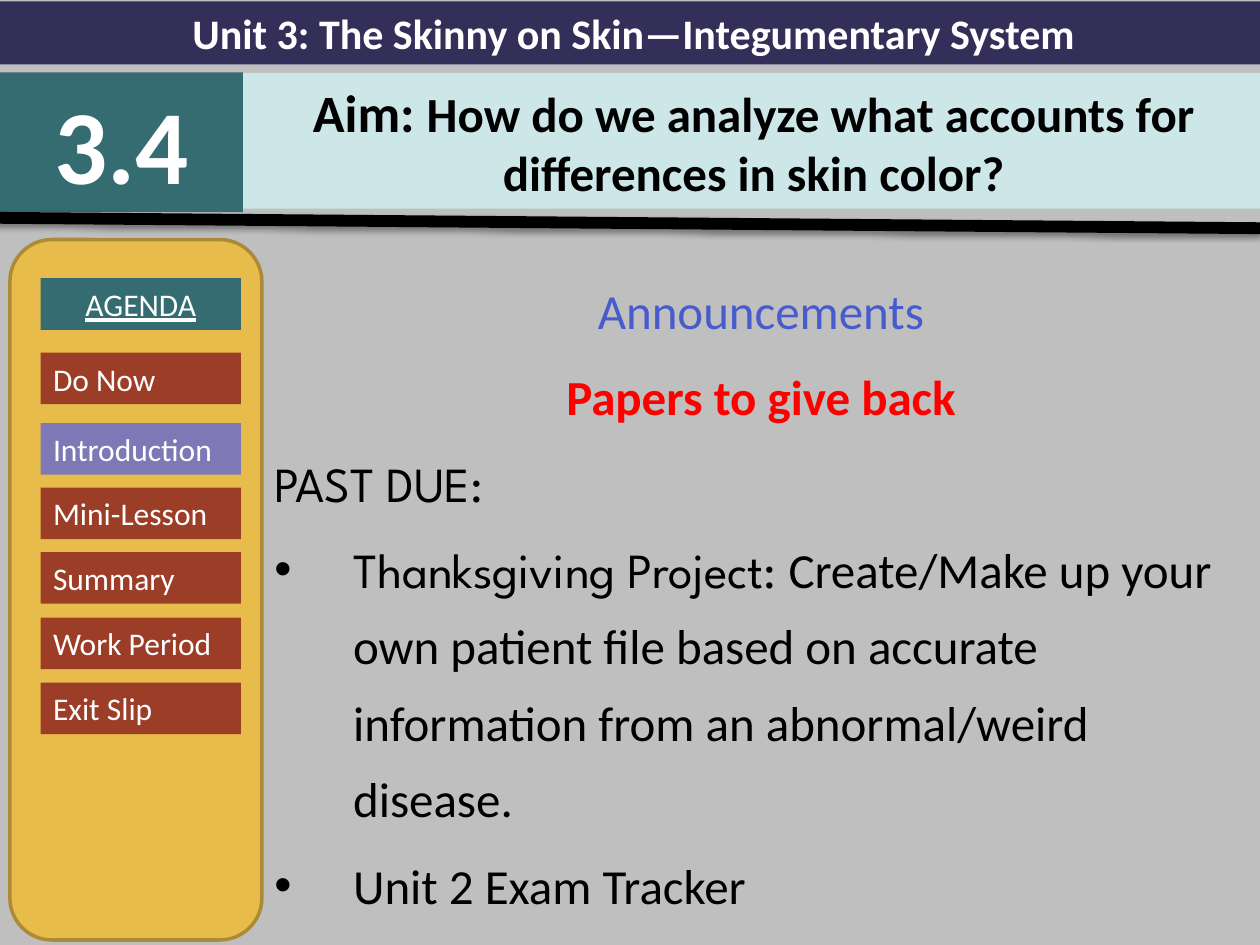
from lxml.etree import SubElement
from pptx import Presentation
from pptx.dml.color import RGBColor
from pptx.enum.shapes import MSO_CONNECTOR, MSO_SHAPE
from pptx.enum.text import MSO_ANCHOR, PP_ALIGN
from pptx.oxml.ns import qn
from pptx.util import Cm, Pt

GREY = RGBColor(0xBF, 0xBF, 0xBF)
NAVY = RGBColor(0x34, 0x2F, 0x59)
TEAL = RGBColor(0x34, 0x6C, 0x71)
PALE_TEAL = RGBColor(0xCD, 0xE6, 0xE8)
GOLD = RGBColor(0xE8, 0xBC, 0x4A)
DARK_GOLD = RGBColor(0xAC, 0x8B, 0x37)
BRICK = RGBColor(0x9C, 0x3D, 0x28)
LILAC = RGBColor(0x7E, 0x78, 0xB7)
BLUE = RGBColor(0x47, 0x5B, 0xCD)
RED = RGBColor(0xFF, 0x00, 0x00)
BLACK = RGBColor(0x00, 0x00, 0x00)
WHITE = RGBColor(0xFF, 0xFF, 0xFF)

AGENDA = [
    ("Do Now", 2.28, BRICK),
    ("Introduction", 3.7, LILAC),
    ("Mini-Lesson", 5.0, BRICK),
    ("Summary", 6.3, BRICK),
    ("Work Period", 7.62, BRICK),
    ("Exit Slip", 8.93, BRICK),
]


def add_run(paragraph, text, size=28, color=BLACK, bold=False, underline=False, font="Calibri"):
    """Append formatted text to a paragraph."""
    run = paragraph.add_run()
    run.text = text
    run.font.size = Pt(size)
    run.font.name = font
    run.font.bold = bold
    run.font.underline = underline
    run.font.color.rgb = color


def add_block(slide, left, top, width, height, fill, outline=None, kind=MSO_SHAPE.RECTANGLE):
    """Add a flat filled shape, measured in centimetres."""
    block = slide.shapes.add_shape(kind, Cm(left), Cm(top), Cm(width), Cm(height))
    block.shadow.inherit = False
    block.fill.solid()
    block.fill.fore_color.rgb = fill
    if outline is None:
        block.line.fill.background()
    else:
        block.line.color.rgb = outline
        block.line.width = Pt(2)
    return block


def add_label(slide, left, top, width, height, fill, runs, align=PP_ALIGN.CENTER):
    """Add a block that holds one paragraph of (text, format) runs."""
    frame = add_block(slide, left, top, width, height, fill).text_frame
    frame.word_wrap = True
    frame.vertical_anchor = MSO_ANCHOR.MIDDLE
    paragraph = frame.paragraphs[0]
    paragraph.alignment = align
    for text, style in runs:
        add_run(paragraph, text, **style)


def add_header(slide, left, top, width):
    """Place the unit bar, the lesson number, the aim and the rule below them."""
    number_width = 4.9
    add_label(slide, left, top, width + 0.15, 1.27, NAVY,
              [("Unit 3: The Skinny on Skin—Integumentary System",
                dict(size=24, color=WHITE, bold=True))])
    add_label(slide, left, top + 1.43, number_width, 2.82, TEAL,
              [("3.4", dict(size=60, color=WHITE, bold=True))])
    add_label(slide, left + number_width, top + 1.44, width - number_width + 0.08, 2.74, PALE_TEAL,
              [("Aim: ", dict(size=30, bold=True)),
               ("How do we analyze what accounts for differences in skin color?",
                dict(bold=True))])
    rule = slide.shapes.add_connector(MSO_CONNECTOR.STRAIGHT, Cm(left - 0.13), Cm(top + 4.36),
                                      Cm(left + width), Cm(top + 4.57))
    rule.line.color.rgb = BLACK
    rule.line.width = Pt(6.75)
    add_drop_shadow(rule)


def add_drop_shadow(rule):
    """Give a connector a soft shadow straight below it."""
    effects = SubElement(rule.line._get_or_add_ln().getparent(), qn("a:effectLst"))
    shadow = SubElement(effects, qn("a:outerShdw"), blurRad=str(Pt(3.1)), dist=str(Pt(1.6)),
                        dir="5400000", rotWithShape="0")
    color = SubElement(shadow, qn("a:srgbClr"), val=str(BLACK))
    SubElement(color, qn("a:alpha"), val="38000")


def add_agenda(slide, left, top, width, height):
    """Place the agenda panel with its heading and steps."""
    add_block(slide, left, top, width, height, GOLD, DARK_GOLD, MSO_SHAPE.ROUNDED_RECTANGLE)
    step_left, step_width, step_height = left + 0.62, 4.04, 1.04
    add_label(slide, step_left, top + 0.78, step_width, step_height, TEAL,
              [("AGENDA", dict(size=18, color=WHITE, underline=True))])
    for step, offset, fill in AGENDA:
        add_label(slide, step_left, top + offset, step_width, step_height, fill,
                  [(step, dict(size=18, color=WHITE))], PP_ALIGN.LEFT)


def add_announcements(slide, left, top, width, height):
    """Place the announcements and the list of past due work."""
    spartan = dict(font="League Spartan")
    lines = [
        (PP_ALIGN.CENTER, False, [("Announcements", dict(color=BLUE))]),
        (PP_ALIGN.CENTER, False, [("Papers to give back", dict(color=RED, bold=True))]),
        (PP_ALIGN.LEFT, False, [("PAST DUE:", spartan)]),
        (PP_ALIGN.LEFT, True, [
            ("Thanksgiving Project: ", spartan),
            ("Create/Make up your own patient file based on accurate information "
             "from an abnormal/weird disease.", {})]),
        (PP_ALIGN.LEFT, True, [("Unit 2 Exam Tracker", {})]),
    ]
    frame = slide.shapes.add_textbox(Cm(left), Cm(top), Cm(width), Cm(height)).text_frame
    frame.word_wrap = True
    for index, (align, bulleted, runs) in enumerate(lines):
        paragraph = frame.add_paragraph() if index else frame.paragraphs[0]
        paragraph.alignment = align
        paragraph.line_spacing = 1.3
        paragraph.space_before = Pt(5.6)
        if bulleted:
            add_bullet(paragraph)
        for text, style in runs:
            add_run(paragraph, text, **style)


def add_bullet(paragraph):
    """Give a paragraph a round bullet and a hanging indent."""
    properties = paragraph._p.get_or_add_pPr()
    indent = Cm(1.59)
    properties.set("marL", str(indent))
    properties.set("indent", str(-indent))
    SubElement(properties, qn("a:buFont"), typeface="Arial")
    SubElement(properties, qn("a:buChar"), char="•")


def main():
    """Build and save the lesson slide."""
    deck = Presentation()
    deck.slide_width, deck.slide_height = Cm(25.4), Cm(19.05)
    slide = deck.slides.add_slide(deck.slide_layouts[6])
    slide.background.fill.solid()
    slide.background.fill.fore_color.rgb = GREY
    add_announcements(slide, 5.28, 5.18, 20.12, 13.87)
    add_header(slide, 0, 0.03, 25.4)
    add_agenda(slide, 0.2, 4.83, 5.08, 14.12)
    deck.save("out.pptx")


if __name__ == "__main__":
    main()
